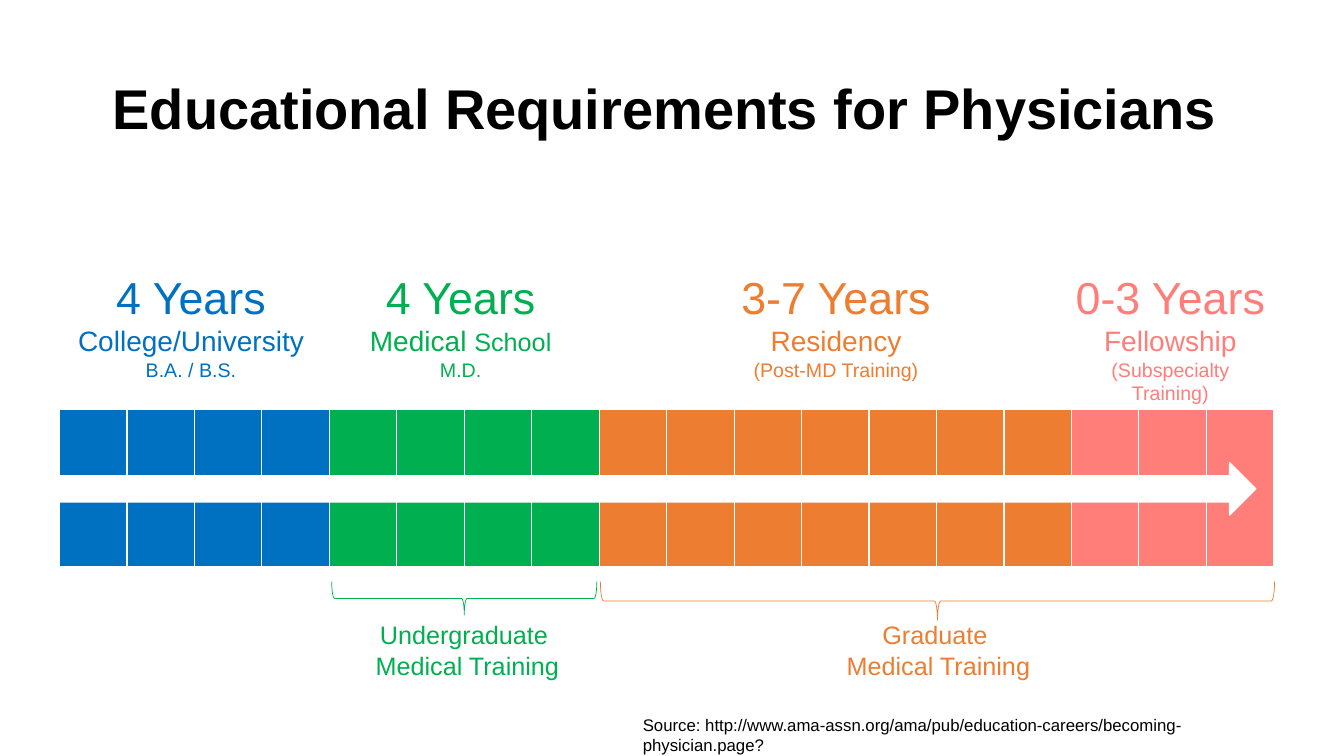
from typing import NamedTuple

import pptx
import pptx.dml.color
import pptx.enum.shapes
import pptx.enum.text
import pptx.oxml
import pptx.oxml.ns
import pptx.shapes.autoshape
import pptx.slide
import pptx.table
import pptx.util
from pptx.dml.color import RGBColor
from pptx.util import Cm

BLUE = RGBColor(0x00, 0x70, 0xC0)
GREEN = RGBColor(0x00, 0xB0, 0x50)
ORANGE = RGBColor(0xED, 0x7D, 0x31)
PINK = RGBColor(0xFF, 0x7E, 0x79)
WHITE = RGBColor(0xFF, 0xFF, 0xFF)
BLACK = RGBColor(0x00, 0x00, 0x00)

FONT = "Arial"
TIMELINE_LEFT = 1.5
TIMELINE_TOP = 10.31
TIMELINE_HEIGHT = 4.01
YEAR_WIDTH = 1.7
STAGE_TOP = 6.68
STAGE_HEIGHT = 3.07
BRACE_TOP = 14.66
TRAINING_TOP = 15.49
BORDER_POINTS = {"lnL": 1, "lnR": 1, "lnT": 1, "lnB": 3}


class Phrase(NamedTuple):
    text: str
    size: float


class Line(NamedTuple):
    phrases: list[Phrase]
    bold: bool = False


class Box(NamedTuple):
    left: float
    top: float
    width: float
    height: float


class Stage(NamedTuple):
    duration: str
    name: list[Phrase]
    detail: str
    color: RGBColor
    years: int
    left: float
    width: float


class Training(NamedTuple):
    level: str
    color: RGBColor
    brace_left: float
    brace_span: float
    brace_depth: float
    label_left: float


STAGES = [
    Stage("4 Years", [Phrase("College/University", 20)], "B.A. / B.S.", BLUE, 4, 1.45, 6.73),
    Stage(
        "4 Years", [Phrase("Medical ", 20), Phrase("School", 18)], "M.D.", GREEN, 4, 8.18, 6.86
    ),
    Stage("3-7 Years", [Phrase("Residency", 20)], "(Post-MD Training)", ORANGE, 7, 15.14, 11.86),
    Stage("0-3 Years", [Phrase("Fellowship", 20)], "(Subspecialty Training)", PINK, 3, 26.75, 5.49),
]
TRAININGS = [
    Training("Undergraduate ", GREEN, 8.36, 6.68, 0.84, 9.19),
    Training("Graduate ", ORANGE, 15.13, 16.99, 0.97, 21.06),
]


def add_text(
    slide: pptx.slide.Slide,
    box: Box,
    lines: list[Line],
    color: RGBColor,
    centered: bool = True,
    wrap: bool = True,
) -> None:
    frame = slide.shapes.add_textbox(*map(Cm, box)).text_frame
    frame.word_wrap = wrap
    frame.auto_size = pptx.enum.text.MSO_AUTO_SIZE.SHAPE_TO_FIT_TEXT
    for index, line in enumerate(lines):
        paragraph = frame.add_paragraph() if index else frame.paragraphs[0]
        if centered:
            paragraph.alignment = pptx.enum.text.PP_ALIGN.CENTER
        paragraph.font.name = FONT
        paragraph.font.bold = line.bold
        paragraph.font.color.rgb = color
        sizes = {phrase.size for phrase in line.phrases}
        if len(sizes) == 1:
            paragraph.font.size = pptx.util.Pt(line.phrases[0].size)
        for phrase in line.phrases:
            run = paragraph.add_run()
            run.text = phrase.text
            if len(sizes) > 1:
                run.font.size = pptx.util.Pt(phrase.size)


def set_borders(cell: pptx.table._Cell) -> None:
    properties = cell._tc.get_or_add_tcPr()
    for position, (side, points) in enumerate(BORDER_POINTS.items()):
        border = pptx.oxml.parse_xml(
            f'<a:{side} {pptx.oxml.ns.nsdecls("a")} w="{pptx.util.Pt(points)}">'
            f'<a:solidFill><a:srgbClr val="{WHITE}"/></a:solidFill></a:{side}>'
        )
        properties.insert(position, border)


def add_timeline(slide: pptx.slide.Slide) -> None:
    year_colors = [stage.color for stage in STAGES for _ in range(stage.years)]
    box = Box(TIMELINE_LEFT, TIMELINE_TOP, YEAR_WIDTH * len(year_colors), TIMELINE_HEIGHT)
    years = slide.shapes.add_table(1, len(year_colors), *map(Cm, box)).table
    for index, color in enumerate(year_colors):
        years.columns[index].width = Cm(YEAR_WIDTH)
        cell = years.cell(0, index)
        cell.fill.solid()
        cell.fill.fore_color.rgb = color
        set_borders(cell)


def add_outlined(
    slide: pptx.slide.Slide,
    kind: pptx.enum.shapes.MSO_SHAPE,
    box: Box,
    color: RGBColor,
    points: float,
) -> pptx.shapes.autoshape.Shape:
    shape = slide.shapes.add_shape(kind, *map(Cm, box))
    shape.shadow.inherit = False
    shape.line.color.rgb = color
    shape.line.width = pptx.util.Pt(points)
    return shape


def add_arrow(slide: pptx.slide.Slide) -> None:
    box = Box(TIMELINE_LEFT, 11.66, 30.15, 1.32)
    arrow = add_outlined(slide, pptx.enum.shapes.MSO_SHAPE.RIGHT_ARROW, box, WHITE, 1)
    arrow.fill.solid()
    arrow.fill.fore_color.rgb = WHITE


def add_stage(slide: pptx.slide.Slide, stage: Stage) -> None:
    lines = [
        Line([Phrase(stage.duration, 32)]),
        Line(stage.name),
        Line([Phrase(stage.detail, 14)]),
    ]
    add_text(slide, Box(stage.left, STAGE_TOP, stage.width, STAGE_HEIGHT), lines, stage.color)


def add_training(slide: pptx.slide.Slide, training: Training) -> None:
    inset = (training.brace_span - training.brace_depth) / 2
    box = Box(
        training.brace_left + inset,
        BRACE_TOP - inset,
        training.brace_depth,
        training.brace_span,
    )
    brace = add_outlined(
        slide, pptx.enum.shapes.MSO_SHAPE.RIGHT_BRACE, box, training.color, 0.5
    )
    brace.fill.background()
    brace.rotation = 90
    lines = [Line([Phrase(training.level, 18)]), Line([Phrase("Medical Training", 18)])]
    label_box = Box(training.label_left, TRAINING_TOP, 5.18, 1.8)
    add_text(slide, label_box, lines, training.color, wrap=False)


def main() -> None:
    presentation = pptx.Presentation()
    presentation.slide_width = Cm(33.87)
    presentation.slide_height = Cm(19.05)
    slide = presentation.slides.add_slide(presentation.slide_layouts[6])

    add_timeline(slide)
    add_arrow(slide)
    for stage in STAGES:
        add_stage(slide, stage)

    source = "Source: http://www.ama-assn.org/ama/pub/education-careers/becoming-physician.page?"
    add_text(
        slide, Box(15.95, 17.88, 16.71, 0.76), [Line([Phrase(source, 12)])], BLACK, centered=False
    )
    title = Line([Phrase("Educational Requirements for Physicians", 40)], bold=True)
    add_text(slide, Box(2.59, 1.73, 28.45, 1.96), [title], BLACK, centered=False, wrap=False)

    for training in TRAININGS:
        add_training(slide, training)
    presentation.save("out.pptx")


if __name__ == "__main__":
    main()
